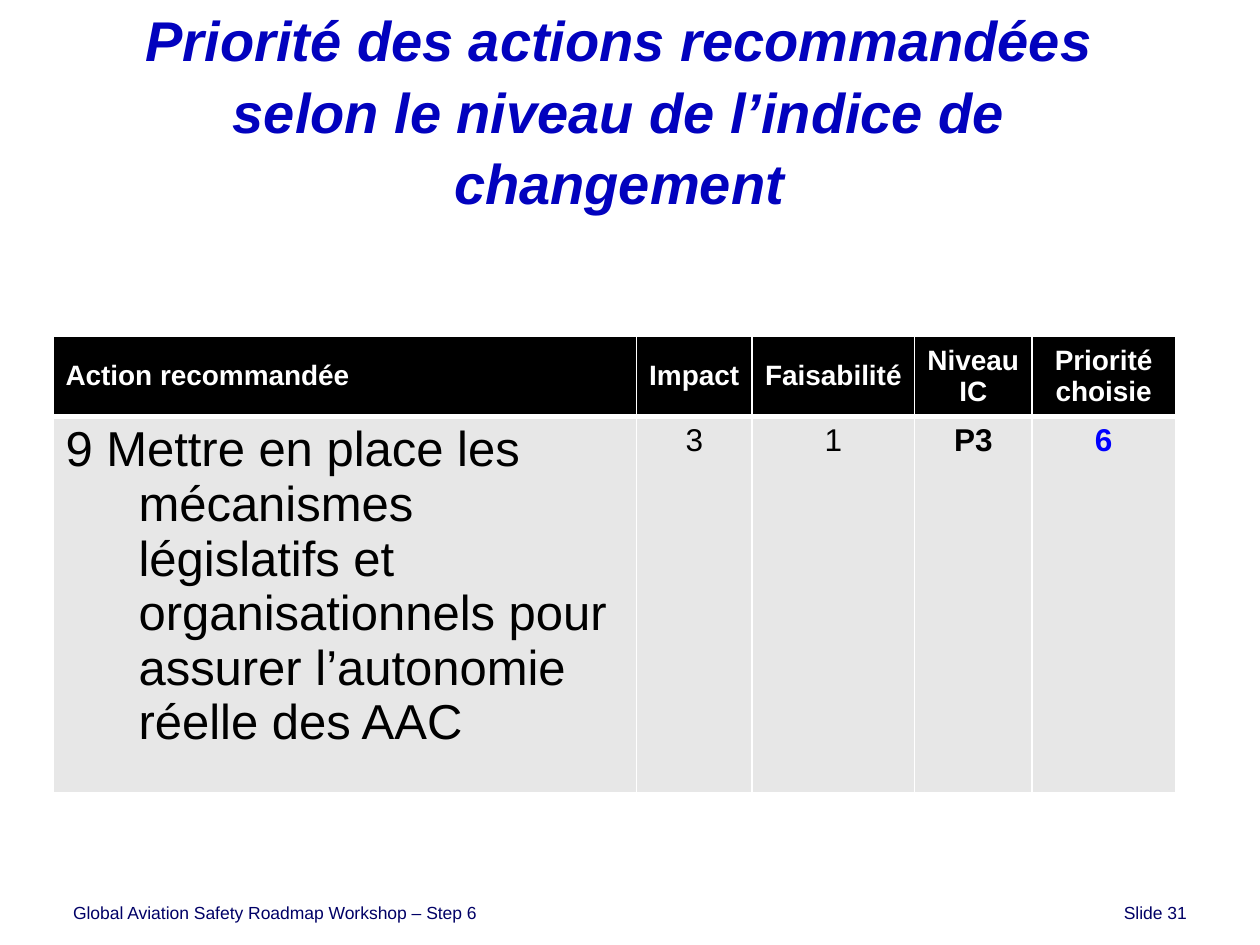
from lxml import etree
from pptx import Presentation
from pptx.dml.color import RGBColor
from pptx.enum.text import MSO_ANCHOR, PP_ALIGN
from pptx.oxml.ns import qn
from pptx.util import Inches, Pt

CENTER, LEFT = PP_ALIGN.CENTER, PP_ALIGN.LEFT
MIDDLE, TOP = MSO_ANCHOR.MIDDLE, MSO_ANCHOR.TOP

TITLE_BLUE = RGBColor(0x02, 0x02, 0xBE)
FOOTER_NAVY = RGBColor(0x00, 0x00, 0x66)
CHOICE_BLUE = RGBColor(0x00, 0x00, 0xFF)
BLACK = RGBColor(0x00, 0x00, 0x00)
WHITE = RGBColor(0xFF, 0xFF, 0xFF)
GREY = RGBColor(0xE7, 0xE7, 0xE7)

FONT = "Arial"
COLUMNS = [4.63, 0.92, 1.29, 0.93, 1.14]
ROWS = [0.58, 2.99]
HEADERS = ["Action recommandée", "Impact", "Faisabilité", "Niveau IC", "Priorité choisie"]
ACTION = ("9 Mettre en place les mécanismes législatifs et organisationnels "
          "pour assurer l’autonomie réelle des AAC")
# text, size, bold, colour
VALUES = [
    (ACTION, 28, False, BLACK),
    ("3", 18, False, BLACK),
    ("1", 18, False, BLACK),
    ("P3", 18, True, BLACK),
    ("6", 18, True, CHOICE_BLUE),
]


def add_run(p, text, size, color, bold=False, italic=False):
    r = p.add_run()
    r.text = text
    r.font.name, r.font.size = FONT, Pt(size)
    r.font.bold, r.font.italic = bold, italic
    r.font.color.rgb = color


def add_text_box(slide, left, top, width, height, anchor):
    sp = slide.shapes.add_textbox(Inches(left), Inches(top), Inches(width), Inches(height))
    tf = sp.text_frame
    tf.word_wrap = True
    tf.vertical_anchor = anchor
    return tf


def set_borders(cell, **widths):
    """Draw white cell edges; widths are in points, keyed by edge tag."""
    tcPr = cell._tc.get_or_add_tcPr()
    for i, (edge, width) in enumerate(widths.items()):
        ln = etree.Element(qn("a:" + edge), w=str(Pt(width)))
        fill = etree.SubElement(ln, qn("a:solidFill"))
        etree.SubElement(fill, qn("a:srgbClr"), val=str(WHITE))
        tcPr.insert(i, ln)


def fill_cell(cell, text, size, bold, color, background, align, anchor):
    cell.fill.solid()
    cell.fill.fore_color.rgb = background
    cell.vertical_anchor = anchor
    p = cell.text_frame.paragraphs[0]
    p.alignment = align
    add_run(p, text, size, color, bold)
    return p


def add_title(slide):
    tf = add_text_box(slide, 0.5, 0.41, 8.83, 0.9, MIDDLE)
    p = tf.paragraphs[0]
    p.alignment = CENTER
    p.line_spacing = 1.07
    add_run(p, "Priorité des actions recommandées selon le niveau de l’indice de changement",
            32, TITLE_BLUE, bold=True, italic=True)


def add_priority_table(slide):
    table = slide.shapes.add_table(
        len(ROWS), len(COLUMNS), Inches(0.42), Inches(2.67),
        Inches(sum(COLUMNS)), Inches(sum(ROWS))).table
    for row, height in zip(table.rows, ROWS):
        row.height = Inches(height)
    for i, (width, header, value) in enumerate(zip(COLUMNS, HEADERS, VALUES)):
        table.columns[i].width = Inches(width)
        align = CENTER if i else LEFT
        head, body = table.cell(0, i), table.cell(1, i)
        fill_cell(head, header, 16, True, WHITE, BLACK, align, MIDDLE)
        p = fill_cell(body, *value, GREY, align, TOP)
        set_borders(head, lnL=1, lnR=1, lnT=1, lnB=3)
        set_borders(body, lnL=1, lnR=1, lnT=3, lnB=1)
        if i == 0:  # hanging indent for the numbered action
            p.space_before = Pt(5.6)
            pPr = p._p.get_or_add_pPr()
            pPr.set("marL", str(Inches(0.58)))
            pPr.set("indent", str(Inches(-0.58)))


def add_footer(slide):
    tf = add_text_box(slide, 0, 7.11, 10, 0.32, TOP)
    tf.margin_left, tf.margin_right = Inches(0.58), Inches(0.5)
    p = tf.paragraphs[0]
    p.alignment = LEFT
    # A right tab holds the slide number against the margin
    tabs = etree.SubElement(p._p.get_or_add_pPr(), qn("a:tabLst"))
    etree.SubElement(tabs, qn("a:tab"), pos=str(Inches(8.84)), algn="r")
    add_run(p, "Global Aviation Safety Roadmap Workshop – Step 6\tSlide 31", 10, FOOTER_NAVY)


def main():
    prs = Presentation()
    prs.slide_width, prs.slide_height = Inches(10), Inches(7.5)
    slide = prs.slides.add_slide(prs.slide_layouts[6])
    add_title(slide)
    add_priority_table(slide)
    add_footer(slide)
    prs.save("out.pptx")


if __name__ == "__main__":
    main()
